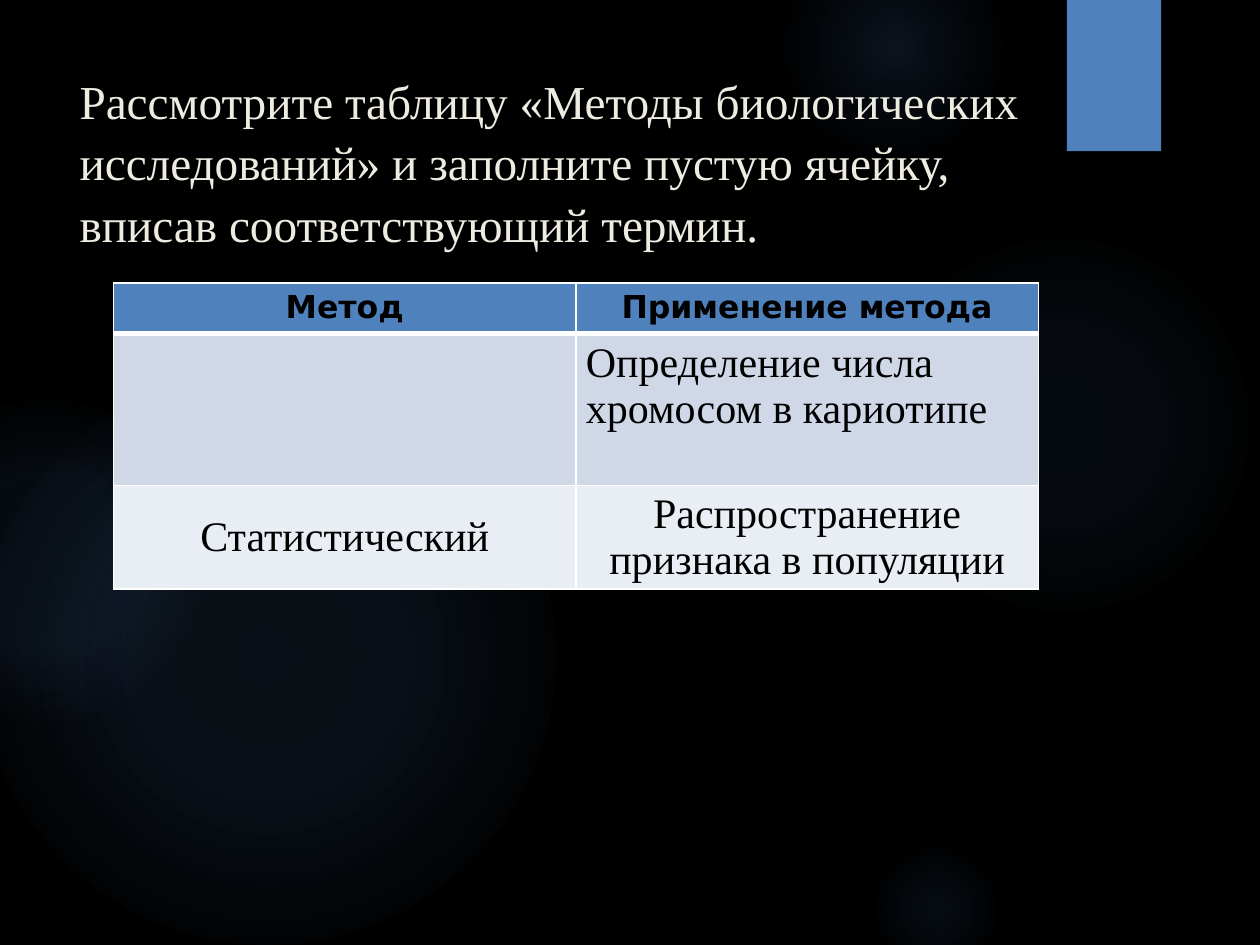
"""Builds a slide with a task title and a table of biological research methods."""
from lxml import etree
from pptx import Presentation
from pptx import util as u
from pptx.dml.color import RGBColor
from pptx.enum import shapes, text
from pptx.oxml import parse_xml
from pptx.oxml.ns import nsdecls, qn

SERIF, SANS = "Times New Roman", "DejaVu Sans"
ACCENT, GLOW, WHITE, BLACK = "4F81BD", "558ED5", "FFFFFF", "000000"
LEFT, CENTER = text.PP_ALIGN.LEFT, text.PP_ALIGN.CENTER
TOP, MIDDLE = text.MSO_ANCHOR.TOP, text.MSO_ANCHOR.MIDDLE

TITLE = ("Рассмотрите таблицу «Методы биологических исследований» "
         "и заполните пустую ячейку, вписав соответствующий термин.")
ROWS = [
    ("Метод", "Применение метода"),
    ("", "Определение числа хромосом в кариотипе"),
    ("Статистический", "Распространение признака в популяции"),
]
ROW_STYLES = [
    dict(height=1.02, fill=ACCENT, font=SANS, size=18, bold=True,
         align=CENTER, anchor=MIDDLE, margins=(0.08, 0.1), bottom=3),
    dict(height=3.07, fill="D0D8E8", font=SERIF, size=24, bold=False,
         align=LEFT, anchor=TOP, margins=(0.2, 0.13), bottom=1),
    dict(height=2.08, fill="E9EDF4", font=SERIF, size=24, bold=False,
         align=CENTER, anchor=MIDDLE, margins=(0.08, 0.1), bottom=1),
]
COLUMN_WIDTH = 9.32
GLOWS = [
    (17.5, 4.65, 7.82, [(0, 7), (36, 6), (69, 0)]),
    (15.8, -1.27, 4.45, [(0, 14), (36, 7), (73, 0)]),
    (17.5, 16.94, 2.74, [(0, 9), (36, 5), (66, 0)]),
    (-0.43, 7.42, 11.63, [(0, 11), (36, 10), (75, 0)]),
    (-2.34, 8.05, 6.55, [(0, 8), (36, 8), (72, 0)]),
]


def paint(fill, color):
    fill.solid()
    fill.fore_color.rgb = RGBColor.from_string(color)


def add_plain(page, kind, *place):
    shape = page.shapes.add_shape(kind, *map(u.Cm, place))
    shape.shadow.inherit = False
    shape.line.fill.background()
    return shape


def add_glow(page, left, top, size, stops):
    glow = add_plain(page, shapes.MSO_SHAPE.OVAL, left, top, size, size)
    glow.fill.background()
    marks = "".join(
        f'<a:gs pos="{place * 1000}"><a:srgbClr val="{GLOW}">'
        f'<a:alpha val="{alpha * 1000}"/></a:srgbClr></a:gs>'
        for place, alpha in stops)
    gradient = parse_xml(
        f'<a:gradFill {nsdecls("a")} rotWithShape="1"><a:gsLst>{marks}</a:gsLst>'
        '<a:path path="circle"><a:fillToRect l="50000" t="50000" r="50000" '
        'b="50000"/></a:path></a:gradFill>')
    properties = glow.element.spPr
    properties.replace(properties.find(qn("a:noFill")), gradient)


def write(para, words, font, size, color, bold=False):
    span = para.add_run()
    span.text = words
    span.font.name, span.font.size, span.font.bold = font, u.Pt(size), bold
    span.font.color.rgb = RGBColor.from_string(color)


def add_borders(cell, widths):
    properties = cell._tc.get_or_add_tcPr()
    for index, (side, width) in enumerate(widths.items()):
        line = etree.Element(qn(f"a:ln{side}"), w=str(u.Pt(width)))
        solid = etree.SubElement(line, qn("a:solidFill"))
        etree.SubElement(solid, qn("a:srgbClr"), val=WHITE)
        properties.insert(index, line)


def fill_cell(cell, words, style, top):
    paint(cell.fill, style["fill"])
    add_borders(cell, dict(L=1, R=1, T=top, B=style["bottom"]))
    cell.vertical_anchor = style["anchor"]
    across, down = map(u.Cm, style["margins"])
    cell.margin_left = cell.margin_right = across
    cell.margin_top = cell.margin_bottom = down
    if words:
        para = cell.text_frame.paragraphs[0]
        para.alignment = style["align"]
        write(para, words, style["font"], style["size"], BLACK, style["bold"])


def set_title(page):
    title = page.shapes.title
    title.left, title.top, title.width, title.height = map(
        u.Cm, (1.35, 1.27, 19.61, 3.89))
    title.element.getparent().append(title.element)
    frame = title.text_frame
    frame.word_wrap, frame.vertical_anchor = True, MIDDLE
    frame.auto_size = text.MSO_AUTO_SIZE.NONE
    para = frame.paragraphs[0]
    para.alignment, para.line_spacing = LEFT, 1.09
    write(para, TITLE, SERIF, 27, "EEECE1")


def add_methods(page):
    total = sum(style["height"] for style in ROW_STYLES)
    table = page.shapes.add_table(
        len(ROWS), 2, u.Cm(2.29), u.Cm(5.7),
        u.Cm(2 * COLUMN_WIDTH), u.Cm(total)).table
    for column in table.columns:
        column.width = u.Cm(COLUMN_WIDTH)
    top = 1
    for row, entries, style in zip(table.rows, ROWS, ROW_STYLES):
        row.height = u.Cm(style["height"])
        for cell, words in zip(row.cells, entries):
            fill_cell(cell, words, style, top)
        top = style["bottom"]


def main():
    deck = Presentation()
    deck.slide_width, deck.slide_height = u.Cm(25.4), u.Cm(19.05)
    page = deck.slides.add_slide(deck.slide_layouts[5])
    paint(page.background.fill, BLACK)
    for glow in GLOWS:
        add_glow(page, *glow)
    tab = add_plain(page, shapes.MSO_SHAPE.RECTANGLE, 21.51, 0, 1.9, 3.05)
    paint(tab.fill, ACCENT)
    set_title(page)
    add_methods(page)
    deck.save("out.pptx")


if __name__ == "__main__":
    main()
